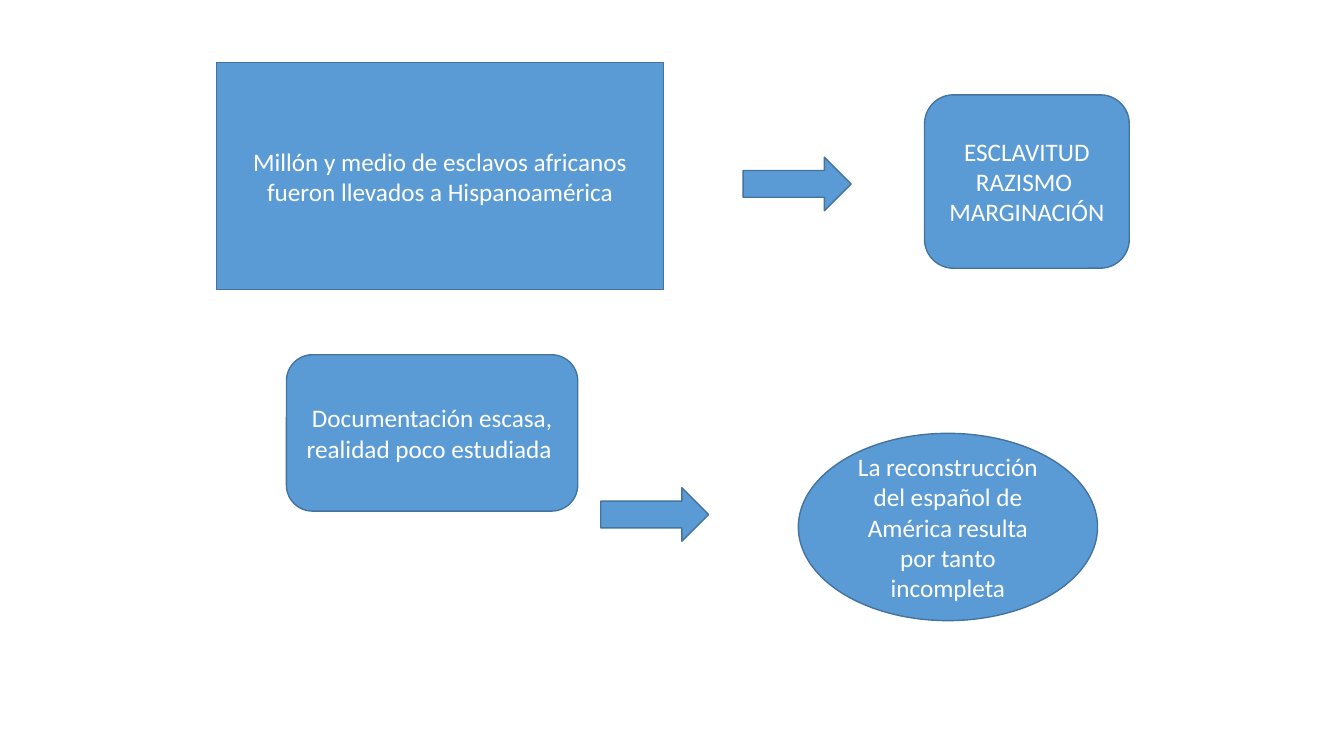
from pptx import Presentation, util as u
from pptx.dml.color import RGBColor
from pptx.enum import shapes, text

KIND = shapes.MSO_SHAPE
ARROW_SIZE = (2.72, 1.35)
FONT = {"name": "Calibri", "size": u.Pt(18)}
FRAME = {"word_wrap": True, "vertical_anchor": text.MSO_ANCHOR.MIDDLE}


def apply(target, values):
    for name, value in values.items():
        setattr(target, name, value)


def color(hex_value):
    return RGBColor.from_string(hex_value)


def add_figure(slide, kind, box, lines=()):
    figure = slide.shapes.add_shape(kind, *(u.Cm(length) for length in box))
    figure.shadow.inherit = False
    figure.fill.solid()
    figure.fill.fore_color.rgb = color("5B9BD5")
    figure.line.color.rgb = color("43739E")
    figure.line.width = u.Pt(1)
    frame = figure.text_frame
    apply(frame, FRAME)
    for index, line in enumerate(lines):
        paragraph = frame.add_paragraph() if index else frame.paragraphs[0]
        paragraph.text = line
        paragraph.alignment = text.PP_ALIGN.CENTER
        apply(paragraph.font, FONT)
        paragraph.font.color.rgb = color("FFFFFF")


def add_consequence(slide, origin, cause, arrow_offset, effect):
    left, top = origin
    cause_kind, cause_size, cause_lines = cause
    effect_kind, effect_offset, effect_size, effect_lines = effect

    def place(offset, size):
        return (left + offset[0], top + offset[1], *size)

    add_figure(slide, cause_kind, place((0, 0), cause_size), cause_lines)
    add_figure(slide, KIND.RIGHT_ARROW, place(arrow_offset, ARROW_SIZE))
    add_figure(slide, effect_kind, place(effect_offset, effect_size), effect_lines)


def main():
    deck = Presentation()
    deck.slide_width, deck.slide_height = u.Cm(33.87), u.Cm(19.05)
    slide = deck.slides.add_slide(deck.slide_layouts[6])
    add_consequence(
        slide, (5.45, 1.58),
        (KIND.RECTANGLE, (11.28, 5.72),
         ["Millón y medio de esclavos africanos fueron llevados a Hispanoamérica"]),
        (13.28, 2.38),
        (KIND.ROUNDED_RECTANGLE, (17.85, 0.81), (5.16, 4.37),
         ["ESCLAVITUD", "RAZISMO ", "MARGINACIÓN"]),
    )
    add_consequence(
        slide, (7.22, 8.94),
        (KIND.ROUNDED_RECTANGLE, (7.34, 3.94),
         ["Documentación escasa, realidad poco estudiada "]),
        (7.92, 3.35),
        (KIND.OVAL, (12.9, 1.98), (7.54, 4.72),
         ["La reconstrucción del español de América resulta por tanto incompleta"]),
    )
    deck.save("out.pptx")


if __name__ == "__main__":
    main()
